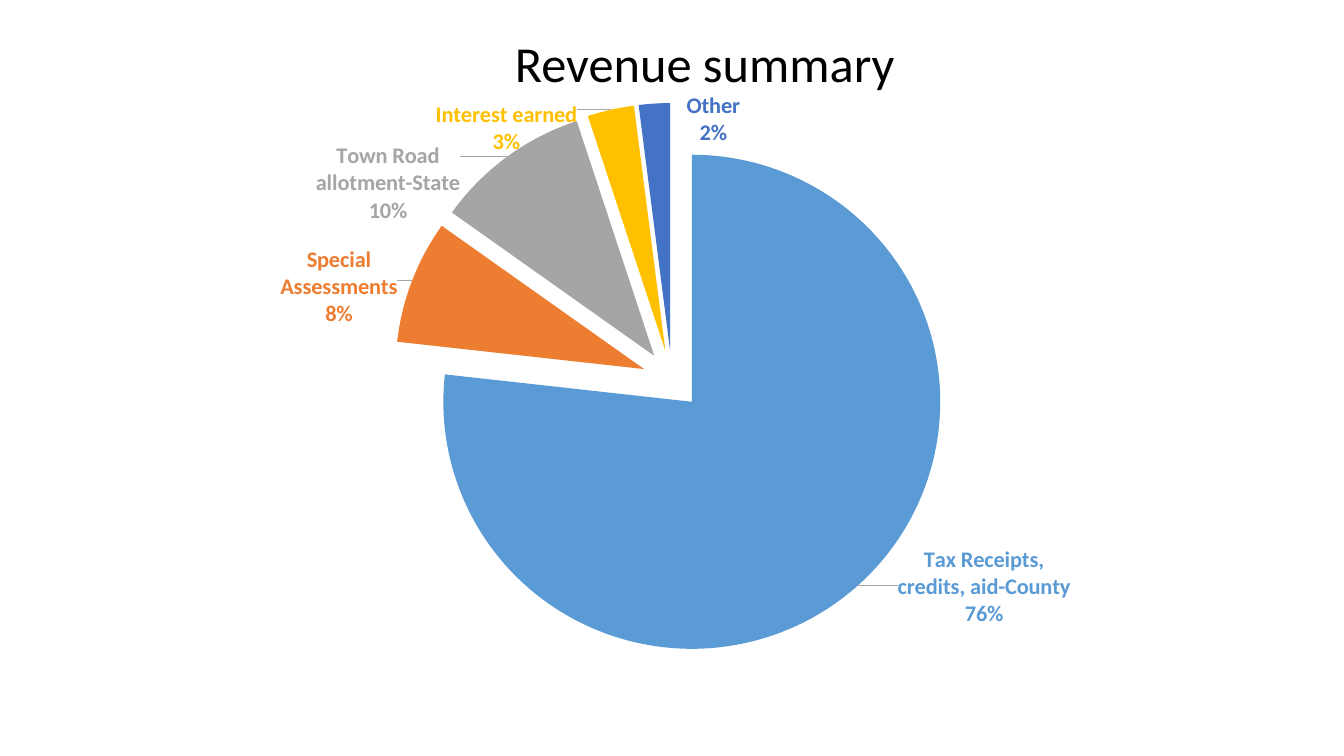
from pptx import Presentation, oxml
from pptx import util as u
from pptx.chart.data import CategoryChartData
from pptx.dml.color import RGBColor
from pptx.enum import chart as charts, text
from pptx.oxml.ns import nsdecls

FONT = "Calibri"
PERCENT = '0"%"'
REVENUES = [
    ("Tax Receipts, credits, aid-County", 76, "5B9BD5", (0.36, -0.44)),
    ("Special Assessments", 8, "ED7D31", (-0.09, 0.49)),
    ("Town Road allotment-State", 10, "A5A5A5", (-0.43, 0.72)),
    ("Interest earned", 3, "FFC000", (-0.32, 0.52)),
    ("Other", 2, "4472C4", (0.59, 0.49)),
]


def color(value):
    return RGBColor.from_string(value)


def chart_xml(tag, attributes="", content=""):
    return oxml.parse_xml(f"<c:{tag} {nsdecls('c', 'a')} {attributes}>{content}</c:{tag}>")


def manual_layout(**settings):
    content = "".join(f'<c:{name} val="{value}"/>' for name, value in settings.items())
    return chart_xml("layout", content=f"<c:manualLayout>{content}</c:manualLayout>")


def style_font(font, size, fill, bold=False):
    font.name = FONT
    font.size = u.Pt(size)
    font.bold = bold
    font.color.rgb = color(fill)


def place(shape, left, top, width, height):
    shape.left, shape.top = u.Inches(left), u.Inches(top)
    shape.width, shape.height = u.Inches(width), u.Inches(height)


def add_title(slide, wording, *box):
    title = slide.shapes.title
    place(title, *box)
    frame = title.text_frame
    frame.text = wording
    frame.word_wrap = True
    frame.auto_size = text.MSO_AUTO_SIZE.NONE
    frame.vertical_anchor = text.MSO_ANCHOR.BOTTOM
    paragraph = frame.paragraphs[0]
    paragraph.alignment = text.PP_ALIGN.CENTER
    paragraph.line_spacing = 0.9
    style_font(paragraph.font, 36, "000000")


def style_slice(point, fill, x, y):
    point.format.fill.solid()
    point.format.fill.fore_color.rgb = color(fill)
    point.format.line.fill.background()

    label = point.data_label
    style_font(label.font, 16, fill, bold=True)
    label.position = charts.XL_LABEL_POSITION.OUTSIDE_END
    element = label.font._element.xpath("ancestor::c:dLbl")[0]
    element.xpath("c:showCatName")[0].set("val", "1")
    index = element.xpath("c:idx")[0]
    index.addnext(chart_xml("numFmt", "formatCode='0\"%\"' sourceLinked='0'"))
    index.addnext(manual_layout(x=x, y=y))
    element.append(chart_xml("separator", content="\n"))


def add_revenue_pie(slide, left, top, width, height):
    data = CategoryChartData(number_format=PERCENT)
    data.categories = [name for name, *_ in REVENUES]
    data.add_series("Series 1", [share for _, share, *_ in REVENUES])
    frame = slide.shapes.add_chart(
        charts.XL_CHART_TYPE.PIE, u.Inches(left), u.Inches(top),
        u.Inches(width), u.Inches(height), data)
    chart = frame.chart
    chart.has_title = False
    chart.has_legend = False
    style_font(chart.font, 10, "000000")
    plot = chart.plots[0]
    plot.vary_by_categories = True
    series = plot.series[0]

    labels = series.data_labels
    labels.show_category_name = True
    labels.show_value = True
    labels.number_format = PERCENT
    labels.number_format_is_linked = False
    labels.position = charts.XL_LABEL_POSITION.OUTSIDE_END
    style_font(labels.font, 16, REVENUES[0][2], bold=True)
    for index, (_, _, fill, (right, down)) in enumerate(REVENUES):
        style_slice(series.points[index], fill, right / width, down / height)

    element = series._element
    element.xpath("c:dPt")[0].addprevious(chart_xml("explosion", 'val="12"'))
    for properties in element.xpath("c:dPt/c:spPr"):
        properties.addprevious(chart_xml("explosion", 'val="12"'))
    element.xpath("c:dLbls/c:showBubbleSize")[0].addnext(chart_xml("separator", content="\n"))
    leader = '<a:ln w="9525"><a:solidFill><a:srgbClr val="A6A6A6"/></a:solidFill></a:ln>'
    element.xpath("c:dLbls")[0].append(
        chart_xml("leaderLines", content=f"<c:spPr>{leader}</c:spPr>"))

    area = chart._chartSpace.xpath("c:chart/c:plotArea")[0]
    for layout in area.xpath("c:layout"):
        area.remove(layout)
    diameter = 5.52
    area.insert(0, manual_layout(
        layoutTarget="inner", xMode="edge", yMode="edge",
        x=(width - diameter) / 2 / width, y=0.56 / height,
        w=diameter / width, h=diameter / height))


def main():
    presentation = Presentation()
    presentation.slide_width = u.Inches(13.33)
    presentation.slide_height = u.Inches(7.5)
    slide = presentation.slides.add_slide(presentation.slide_layouts[5])
    add_title(slide, "Revenue summary", 1.99, 0, 10, 0.98)
    add_revenue_pie(slide, 2.08, 0.43, 9.17, 6.63)
    presentation.save("out.pptx")


if __name__ == "__main__":
    main()
